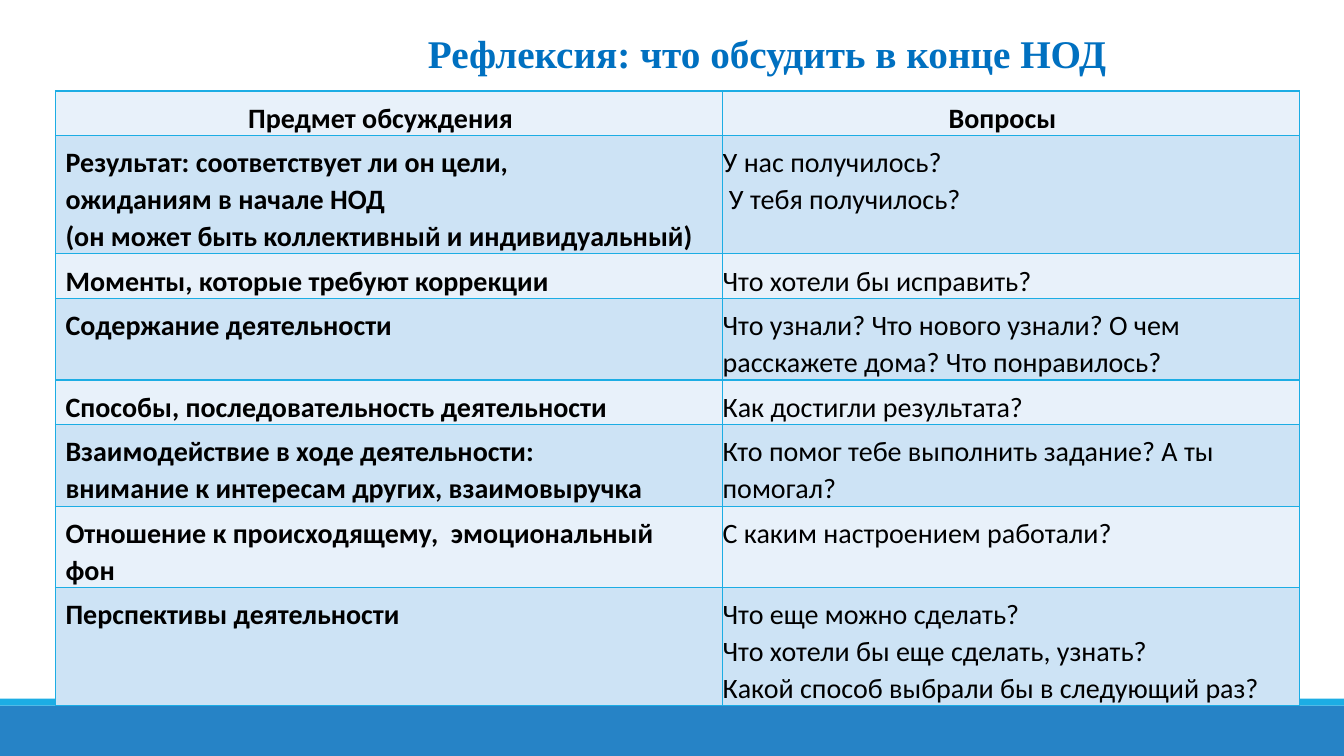
from lxml import etree
from pptx import Presentation
from pptx.dml.color import RGBColor
from pptx.enum.shapes import MSO_SHAPE
from pptx.enum.text import MSO_ANCHOR, MSO_AUTO_SIZE, PP_ALIGN
from pptx.oxml.ns import qn
from pptx.util import Pt

RECTANGLE = MSO_SHAPE.RECTANGLE
TOP, MIDDLE = MSO_ANCHOR.TOP, MSO_ANCHOR.MIDDLE
LEFT, CENTER = PP_ALIGN.LEFT, PP_ALIGN.CENTER
NO_AUTOFIT = MSO_AUTO_SIZE.NONE

TITLE_BLUE = RGBColor(0x00, 0x70, 0xC0)
BAND_BLUE = RGBColor(0x26, 0x83, 0xC6)
ACCENT_BLUE = RGBColor(0x1C, 0xAD, 0xE4)
PALE_ROW = RGBColor(0xE8, 0xF1, 0xFA)
TINTED_ROW = RGBColor(0xCD, 0xE3, 0xF5)
BLACK = RGBColor(0x00, 0x00, 0x00)

SLIDE_WIDTH, SLIDE_HEIGHT = 960, 540
TITLE_TEXT = "Рефлексия: что обсудить в конце НОД"
TITLE_FONT = {"name": "Times New Roman", "size": Pt(28), "bold": True}
CELL_FONT = {"name": "Calibri", "size": Pt(20)}
CELL_MARGINS = {"margin_left": 0, "margin_top": Pt(5.76),
                "margin_right": Pt(12), "margin_bottom": 0}
LINE_SPACING = 1.07
COLUMN_WIDTHS = [476.6, 411.8]
ROWS = [
    (31, "Предмет обсуждения", "Вопросы"),
    (83, "Результат: соответствует ли он цели,\nожиданиям в начале НОД\n"
         "(он может быть коллективный и индивидуальный)",
     "У нас получилось?\n У тебя получилось?"),
    (32, "Моменты, которые требуют коррекции", "Что хотели бы исправить?"),
    (57, "Содержание деятельности",
     "Что узнали? Что нового узнали? О чем расскажете дома? Что понравилось?"),
    (31, "Способы, последовательность деятельности", "Как достигли результата?"),
    (57, "Взаимодействие в ходе деятельности:\n"
         "внимание к интересам других, взаимовыручка",
     "Кто помог тебе выполнить задание? А ты помогал?"),
    (57, "Отношение к происходящему,  эмоциональный фон",
     "С каким настроением работали?"),
    (83, "Перспективы деятельности",
     "Что еще можно сделать?\nЧто хотели бы еще сделать, узнать?\n"
     "Какой способ выбрали бы в следующий раз?"),
]


def set_attributes(target, values):
    """Set every attribute of the target from a dict."""
    for name, value in values.items():
        setattr(target, name, value)


def format_paragraph(paragraph, font, color, alignment, indent):
    """Format one paragraph and its runs."""
    set_attributes(paragraph, {"alignment": alignment, "line_spacing": LINE_SPACING,
                               "space_before": Pt(0), "space_after": Pt(0)})
    properties = paragraph._p.get_or_add_pPr()
    properties.set("marL", str(Pt(indent)))
    properties.set("indent", "0")
    for run in paragraph.runs:
        set_attributes(run.font, font)
        run.font.color.rgb = color


def add_title(slide, left, top, width, height):
    """Place the slide title in its placeholder."""
    title = slide.shapes.title
    set_attributes(title, {"left": Pt(left), "top": Pt(top),
                           "width": Pt(width), "height": Pt(height)})
    frame = title.text_frame
    frame.text = TITLE_TEXT
    set_attributes(frame, {"word_wrap": True, "auto_size": NO_AUTOFIT,
                           "vertical_anchor": TOP})
    format_paragraph(frame.paragraphs[0], TITLE_FONT, TITLE_BLUE, LEFT, 46)


def add_footer(slide, left, top, width, height):
    """Draw the thin accent stripe above the wide band."""
    stripe = 5
    bars = [(top + stripe, height - stripe, BAND_BLUE), (top, stripe, ACCENT_BLUE)]
    for bar_top, bar_height, color in bars:
        bar = slide.shapes.add_shape(RECTANGLE, Pt(left), Pt(bar_top),
                                     Pt(width), Pt(bar_height))
        bar.shadow.inherit = False
        bar.fill.solid()
        bar.fill.fore_color.rgb = color
        bar.line.fill.background()


def add_borders(cell):
    """Give the cell an accent line on all four sides."""
    properties = cell._tc.get_or_add_tcPr()
    for side in ("a:lnL", "a:lnR", "a:lnT", "a:lnB"):
        line = etree.SubElement(properties, qn(side), w=str(Pt(1)))
        fill = etree.SubElement(line, qn("a:solidFill"))
        etree.SubElement(fill, qn("a:srgbClr"), val=str(ACCENT_BLUE))


def fill_cell(cell, text, row_index, column_index):
    """Write and format one table cell."""
    is_header = row_index == 0
    is_topic = column_index == 0
    cell.text = text
    set_attributes(cell, CELL_MARGINS)
    cell.vertical_anchor = MIDDLE if is_header else TOP
    add_borders(cell)
    cell.fill.solid()
    cell.fill.fore_color.rgb = TINTED_ROW if row_index % 2 else PALE_ROW
    font = {**CELL_FONT, "bold": is_header or is_topic}
    alignment = CENTER if is_header else LEFT
    indent = 7.2 if is_topic and not is_header else 0
    for paragraph in cell.text_frame.paragraphs:
        format_paragraph(paragraph, font, BLACK, alignment, indent)


def add_questions_table(slide, left, top, width, height):
    """Build the table of topics and questions."""
    table = slide.shapes.add_table(len(ROWS), len(COLUMN_WIDTHS), Pt(left), Pt(top),
                                   Pt(width), Pt(height)).table
    set_attributes(table, {"first_row": False, "horz_banding": False})
    for column, column_width in zip(table.columns, COLUMN_WIDTHS):
        column.width = Pt(column_width)
    for row_index, (row_height, *texts) in enumerate(ROWS):
        table.rows[row_index].height = Pt(row_height)
        for column_index, text in enumerate(texts):
            fill_cell(table.cell(row_index, column_index), text,
                      row_index, column_index)


def main():
    """Build and save the presentation."""
    presentation = Presentation()
    set_attributes(presentation, {"slide_width": Pt(SLIDE_WIDTH),
                                  "slide_height": Pt(SLIDE_HEIGHT)})
    slide = presentation.slides.add_slide(presentation.slide_layouts[5])
    add_footer(slide, 0, 499, SLIDE_WIDTH, SLIDE_HEIGHT - 499)
    add_title(slide, 252.5, 15, 557.5, 41)
    add_questions_table(slide, 39.6, 65, sum(COLUMN_WIDTHS),
                        sum(row[0] for row in ROWS))
    presentation.save("out.pptx")


if __name__ == "__main__":
    main()
